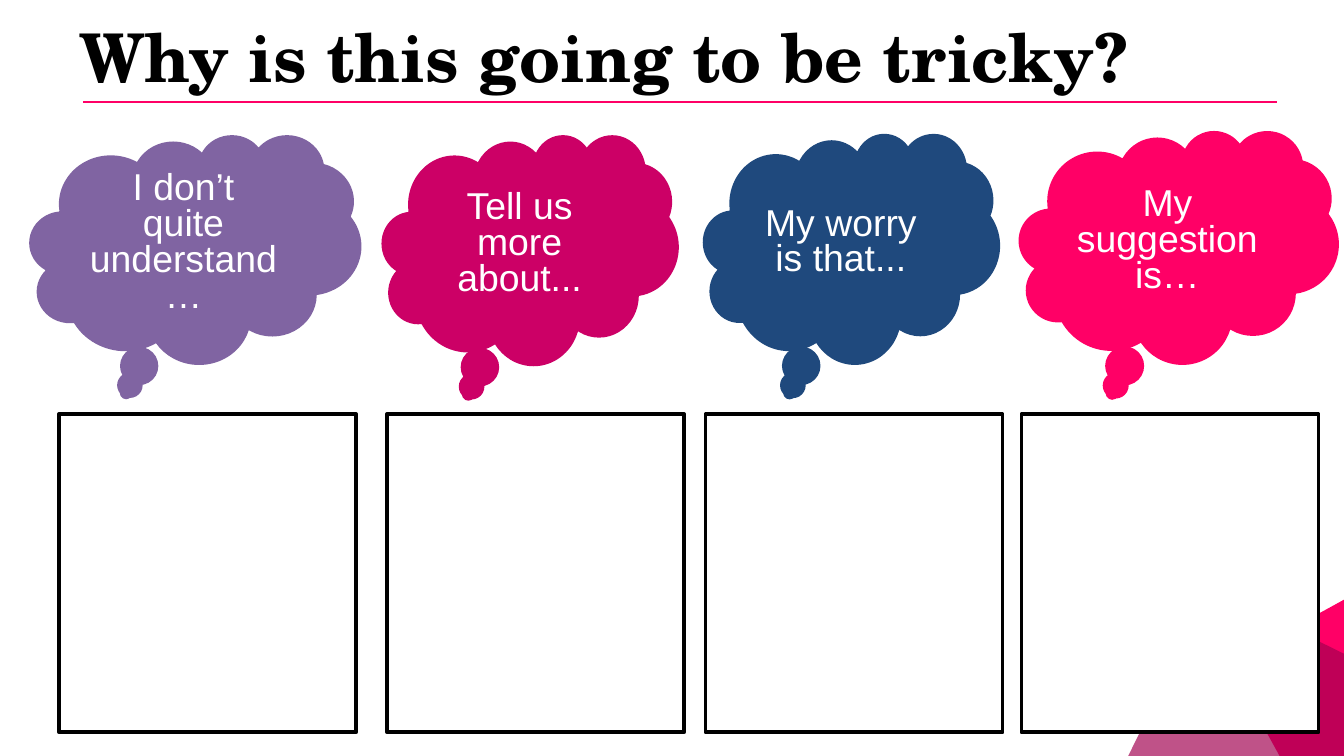
import dataclasses

import lxml.etree
import pptx
import pptx.dml.color
import pptx.enum.shapes
import pptx.enum.text
import pptx.oxml.ns
import pptx.util

Pt = pptx.util.Pt
SHAPE = pptx.enum.shapes.MSO_SHAPE


@dataclasses.dataclass(frozen=True)
class Theme:
    pink: str = "FF0066"
    plum: str = "A20051"
    magenta: str = "CC0066"
    purple: str = "8064A2"
    navy: str = "1F497D"
    white: str = "FFFFFF"
    black: str = "000000"
    title_font: str = "TeX Gyre Schola"
    body_font: str = "Arial"
    title_size: int = 36
    body_size: int = 20


THEME = Theme()


def rgb(value):
    return pptx.dml.color.RGBColor.from_string(value)


def add_element(parent, tag, **attributes):
    return lxml.etree.SubElement(parent, pptx.oxml.ns.qn(tag), attributes)


def add_filled(page, kind, box, color):
    """Add a plain filled shape without outline or shadow."""
    shape = page.shapes.add_shape(kind, *(Pt(length) for length in box))
    shape.shadow.inherit = False
    shape.fill.solid()
    shape.fill.fore_color.rgb = rgb(color)
    shape.line.fill.background()
    return shape


def write(shape, text, font, size, color, bold=False):
    """Set one tightly spaced paragraph and return it."""
    shape.text_frame.word_wrap = True
    para = shape.text_frame.paragraphs[0]
    para.text = text
    para.line_spacing = 0.8
    span = para.runs[0]
    span.font.name = font
    span.font.size = Pt(size)
    span.font.bold = bold
    span.font.color.rgb = rgb(color)
    return para


def add_corner(page, left, top):
    """Two tilted squares running off the bottom right corner."""
    square = add_filled(page, SHAPE.RECTANGLE, (left + 56, top, 108, 108), THEME.pink)
    square.rotation = 331.2
    overlay = add_filled(page, SHAPE.RECTANGLE, (left, top + 9.4, 106.6, 110.8), THEME.plum)
    overlay.rotation = 296.2
    color = overlay.fill._xPr.find(".//" + pptx.oxml.ns.qn("a:srgbClr"))
    add_element(color, "a:alpha", val="68000")


def add_heading(page, left, top, width, height):
    """Title with a thin rule beneath it."""
    rule = page.shapes.add_connector(
        pptx.enum.shapes.MSO_CONNECTOR.STRAIGHT,
        Pt(left + 9.4), Pt(top + height), Pt(left + 648.7), Pt(top + height))
    rule.line.color.rgb = rgb(THEME.pink)
    rule.line.width = Pt(0.75)
    add_element(rule._element.spPr, "a:effectLst")

    title = page.shapes.add_textbox(Pt(left), Pt(top), Pt(width), Pt(height))
    write(title, "Why is this going to be tricky?", THEME.title_font,
          THEME.title_size, THEME.black, bold=True)


def add_cloud(page, box, text, color):
    """Thought cloud holding a sentence starter."""
    cloud = add_filled(page, SHAPE.CLOUD_CALLOUT, box, color)
    cloud.text_frame.vertical_anchor = pptx.enum.text.MSO_ANCHOR.MIDDLE
    para = write(cloud, text, THEME.body_font, THEME.body_size, THEME.white)
    para.alignment = pptx.enum.text.PP_ALIGN.CENTER


def add_answer_box(page, box):
    """Empty framed space for the answers."""
    frame = add_filled(page, SHAPE.RECTANGLE, box, THEME.white)
    frame.line.color.rgb = rgb(THEME.black)
    frame.line.width = Pt(2)


def main():
    deck = pptx.Presentation()
    deck.slide_width, deck.slide_height = Pt(720), Pt(405)
    page = deck.slides.add_slide(deck.slide_layouts[6])

    add_corner(page, 621.5, 322.6)
    add_heading(page, 35.3, 13, 641, 41.7)

    # Cloud box, sentence starter, colour and left edge of the answer box
    columns = [
        ((15.8, 72, 177.8, 123.1), "I don’t quite understand…", THEME.purple, 31.7),
        ((204.5, 72, 159.1, 123.8), "Tell us more about...", THEME.magenta, 207.4),
        ((376.6, 71.3, 159.1, 123.8), "My worry is that...", THEME.navy, 378),
        ((545.8, 69.8, 171.4, 125.3), "My suggestion is…", THEME.pink, 547.2),
    ]
    for cloud_box, text, color, left in columns:
        add_cloud(page, cloud_box, text, color)
        add_answer_box(page, (left, 221.8, 159.1, 170.6))

    deck.save("out.pptx")


if __name__ == "__main__":
    main()
